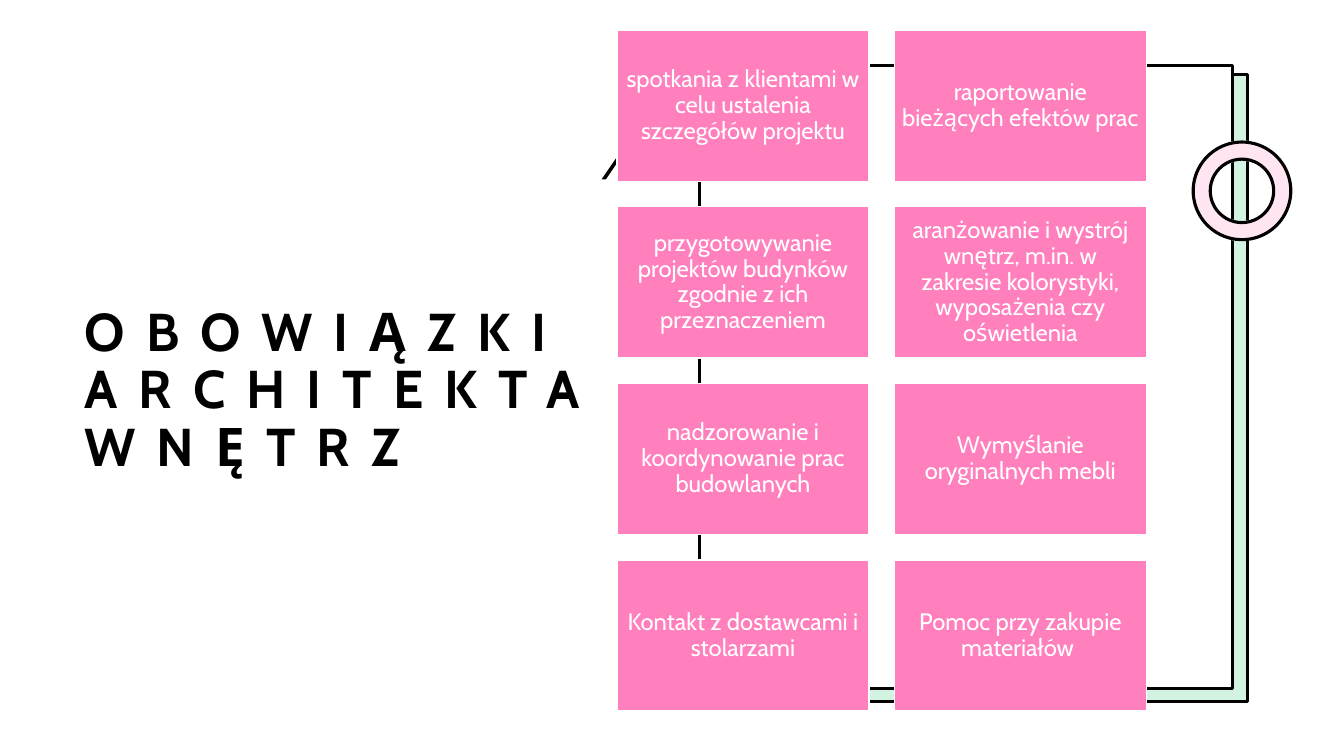
from lxml import etree
from pptx import Presentation
from pptx.dml.color import RGBColor
from pptx.enum.shapes import MSO_SHAPE
from pptx.enum.text import MSO_ANCHOR, MSO_AUTO_SIZE, PP_ALIGN
from pptx.oxml.ns import qn
from pptx.util import Cm, Pt

TITLE = "OBOWIĄZKI ARCHITEKTA WNĘTRZ"
DUTIES = [
    "spotkania z klientami w celu ustalenia szczegółów projektu",
    "raportowanie bieżących efektów prac",
    "przygotowywanie projektów budynków zgodnie z ich przeznaczeniem",
    "aranżowanie i wystrój wnętrz, m.in. w zakresie kolorystyki, wyposażenia czy oświetlenia",
    "nadzorowanie i koordynowanie prac budowlanych",
    "Wymyślanie oryginalnych mebli",
    "Kontakt z dostawcami i stolarzami",
    "Pomoc przy zakupie materiałów ",
]

WHITE = RGBColor(0xFF, 0xFF, 0xFF)
BLACK = RGBColor(0x00, 0x00, 0x00)
PINK = RGBColor(0xFF, 0x80, 0xBD)
GREEN = RGBColor(0x21, 0xC4, 0x6B)
RECT, DONUT = MSO_SHAPE.RECTANGLE, MSO_SHAPE.DONUT
FONT = "Cabin"

BACK_FRAME = (18.01, 1.88, 13.44, 15.8)
FRONT_FRAME = (17.63, 1.65, 13.44, 15.7)
RING = (30.07, 3.58, 2.46, 2.46)
RING_WIDTH = 0.175
SLASH = [(15.27, 4.52), (15.16, 4.52), (16.05, 3.23), (16.15, 3.23)]
COLS = 2
CARD_LEFT, CARD_TOP = 15.55, 0.76
CARD_W, CARD_H, GAP = 6.35, 3.81, 0.64
CARD_INSET = 0.18


def add_block(shapes, kind, box, fill, line, weight=2.25, opacity=None):
    """Add a preset shape with a flat fill and outline."""
    sp = shapes.add_shape(kind, *map(Cm, box))
    sp.shadow.inherit = False
    sp.fill.solid()
    sp.fill.fore_color.rgb = fill
    if opacity:
        color = sp._element.spPr.find(qn("a:solidFill"))[0]
        etree.SubElement(color, qn("a:alpha")).set("val", str(opacity * 1000))
    sp.line.color.rgb = line
    sp.line.width = Pt(weight)
    if kind == DONUT:
        sp.adjustments[0] = RING_WIDTH
    return sp


def format_text(tf, size, color, bold=False):
    """Format the single paragraph of a text frame."""
    tf.word_wrap = True
    p = tf.paragraphs[0]
    p.line_spacing = 0.9
    r = p.runs[0]
    r.font.name = FONT
    r.font.size = Pt(size)
    r.font.bold = bold
    r.font.color.rgb = color
    return p


def add_title(slide):
    """Place the widely spaced title."""
    sp = slide.shapes.title
    sp.left, sp.top, sp.width, sp.height = map(Cm, (1.88, 2.26, 13.59, 9.91))
    tf = sp.text_frame
    tf.text = TITLE
    tf.auto_size = MSO_AUTO_SIZE.NONE
    tf.vertical_anchor = MSO_ANCHOR.BOTTOM
    p = format_text(tf, 38, BLACK, bold=True)
    p.alignment = PP_ALIGN.LEFT
    p.runs[0]._r.get_or_add_rPr().set("spc", "1500")


def add_slash(shapes):
    """Draw the short slanted stroke."""
    points = [(Cm(x), Cm(y)) for x, y in SLASH]
    builder = shapes.build_freeform(*points[0])
    builder.add_line_segments(points[1:])
    sp = builder.convert_to_shape()
    sp.shadow.inherit = False
    sp.fill.solid()
    sp.fill.fore_color.rgb = BLACK
    sp.line.fill.background()


def add_card(shapes, index, text):
    """Add one duty card at its place in the grid."""
    row, col = divmod(index, COLS)
    box = (CARD_LEFT + col * (CARD_W + GAP), CARD_TOP + row * (CARD_H + GAP), CARD_W, CARD_H)
    sp = add_block(shapes, RECT, box, PINK, WHITE, weight=1)
    tf = sp.text_frame
    tf.text = text
    tf.margin_left = tf.margin_right = tf.margin_top = tf.margin_bottom = Cm(CARD_INSET)
    tf.vertical_anchor = MSO_ANCHOR.MIDDLE
    format_text(tf, 17, WHITE).alignment = PP_ALIGN.CENTER


def main():
    """Build the slide and save it."""
    prs = Presentation()
    prs.slide_width, prs.slide_height = Cm(33.87), Cm(19.05)
    slide = prs.slides.add_slide(prs.slide_layouts[5])
    slide.background.fill.solid()
    slide.background.fill.fore_color.rgb = WHITE
    shapes = slide.shapes

    add_title(slide)
    add_block(shapes, RECT, BACK_FRAME, WHITE, WHITE)
    add_block(shapes, RECT, BACK_FRAME, GREEN, BLACK, opacity=20)
    add_block(shapes, RECT, FRONT_FRAME, WHITE, BLACK)
    add_slash(shapes)
    add_block(shapes, DONUT, RING, WHITE, WHITE)
    add_block(shapes, DONUT, RING, PINK, BLACK, opacity=20)
    for i, duty in enumerate(DUTIES):
        add_card(shapes, i, duty)
    prs.save("out.pptx")


if __name__ == "__main__":
    main()
